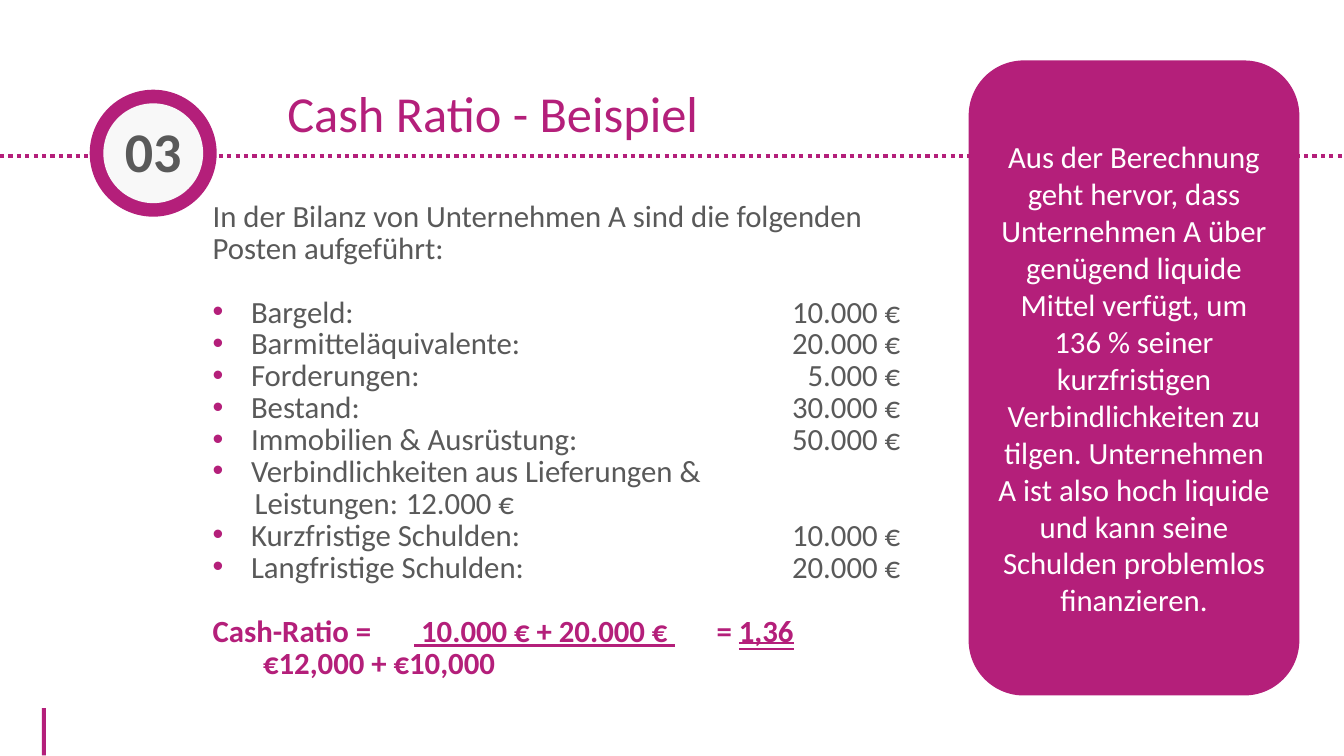
"""Build the slide with the worked cash ratio example."""
from dataclasses import dataclass, field

import lxml.etree
import pptx
import pptx.dml.color
import pptx.enum.dml
import pptx.enum.shapes
import pptx.enum.text
import pptx.oxml.ns
import pptx.shapes.autoshape
import pptx.slide
import pptx.text.text
import pptx.util

Pt = pptx.util.Pt
Align = pptx.enum.text.PP_ALIGN
Anchor = pptx.enum.text.MSO_ANCHOR
Underline = pptx.enum.text.MSO_UNDERLINE
Preset = pptx.enum.shapes.MSO_SHAPE

MAGENTA = pptx.dml.color.RGBColor(0xB4, 0x1F, 0x7A)
GREY = pptx.dml.color.RGBColor(0x59, 0x59, 0x59)
PALE = pptx.dml.color.RGBColor(0xF8, 0xF8, 0xF8)
WHITE = pptx.dml.color.RGBColor(0xFF, 0xFF, 0xFF)

FONT = "Calibri"
TEXT_SIZE = 22
LINE_PITCH = 22.8
HANGING = 27.4
AMOUNT_TABS = (("r", 514),)
RATIO_TABS = (("ctr", 290), ("l", 409))


@dataclass(frozen=True)
class Piece:
    text: str
    color: pptx.dml.color.RGBColor = GREY
    size: float = TEXT_SIZE
    bold: bool = False
    underline: Underline = Underline.NONE


@dataclass(frozen=True)
class Line:
    pieces: list[Piece]
    bullet: bool = False
    margin: float = 0
    tabs: tuple[tuple[str, float], ...] = ()
    gap: float = 0


@dataclass(frozen=True)
class Block:
    preset: Preset
    box: tuple[float, float, float, float]
    fill: pptx.dml.color.RGBColor
    pieces: list[Piece] = field(default_factory=list)
    inset: float = 7.2
    lift: float = 3.6


def posten(label: str, amount: str = "", gap: float = 0) -> Line:
    text = f"{label}\t{amount}" if amount else label
    return Line([Piece(text)], True, HANGING, AMOUNT_TABS, gap)


def ratio(text: str, underline: Underline = Underline.NONE) -> Piece:
    return Piece(text, MAGENTA, bold=True, underline=underline)


BODY = [
    Line([Piece("In der Bilanz von Unternehmen A sind die folgenden")]),
    Line([Piece("Posten aufgeführt:")]),
    posten("Bargeld:", "10.000 €", LINE_PITCH),
    posten("Barmitteläquivalente:", "20.000 €"),
    posten("Forderungen:", "5.000 €"),
    posten("Bestand:", "30.000 €"),
    posten("Immobilien & Ausrüstung:", "50.000 €"),
    posten("Verbindlichkeiten aus Lieferungen &"),
    Line([Piece("Leistungen:\t12.000 €")], margin=30, tabs=AMOUNT_TABS),
    posten("Kurzfristige Schulden:", "10.000 €"),
    posten("Langfristige Schulden:", "20.000 €"),
    Line(
        [
            ratio("Cash-Ratio =\t"),
            ratio(" 10.000 € + 20.000 € ", Underline.SINGLE_LINE),
            ratio("\t= "),
            ratio("1,36", Underline.DOUBLE_LINE),
        ],
        tabs=RATIO_TABS,
        gap=LINE_PITCH,
    ),
    Line([ratio("\t€12,000 + €10,000")], tabs=RATIO_TABS),
]

CONCLUSION = (
    "Aus der Berechnung geht hervor, dass Unternehmen A über genügend liquide "
    "Mittel verfügt, um 136 % seiner kurzfristigen Verbindlichkeiten zu tilgen. "
    "Unternehmen A ist also hoch liquide und kann seine Schulden problemlos "
    "finanzieren."
)

BLOCKS = [
    Block(Preset.RECTANGLE, (29.9, 505.8, 2.9, 33.8), MAGENTA),
    Block(Preset.OVAL, (64.1, 64.1, 90.7, 90.7), MAGENTA),
    Block(Preset.OVAL, (73.8, 73.8, 71.3, 71.3), PALE,
          [Piece("03", size=40, bold=True)], inset=0, lift=5),
    Block(Preset.ROUNDED_RECTANGLE, (691.9, 43.2, 236.2, 453.6), MAGENTA,
          [Piece(CONCLUSION, WHITE)]),
]


def add_pieces(paragraph: pptx.text.text._Paragraph, pieces: list[Piece]) -> None:
    for piece in pieces:
        run = paragraph.add_run()
        run.text = piece.text
        run.font.name = FONT
        run.font.size = Pt(piece.size)
        run.font.bold = piece.bold
        run.font.underline = piece.underline
        run.font.color.rgb = piece.color


def add_child(parent: lxml.etree._Element, tag: str, **attributes: str) -> lxml.etree._Element:
    return lxml.etree.SubElement(parent, pptx.oxml.ns.qn(tag), attributes)


def format_line(paragraph: pptx.text.text._Paragraph, line: Line) -> None:
    properties = paragraph._p.get_or_add_pPr()
    properties.set("marL", str(Pt(line.margin)))
    properties.set("indent", str(Pt(-line.margin if line.bullet else 0)))
    if line.bullet:
        add_child(add_child(properties, "a:buClr"), "a:srgbClr", val=str(MAGENTA))
        add_child(properties, "a:buFont", typeface="Arial")
        add_child(properties, "a:buChar", char="•")
    else:
        add_child(properties, "a:buNone")
    if line.tabs:
        stops = add_child(properties, "a:tabLst")
        for align, position in line.tabs:
            add_child(stops, "a:tab", pos=str(Pt(position)), algn=align)
    paragraph.alignment = Align.LEFT
    paragraph.line_spacing = Pt(LINE_PITCH)
    paragraph.space_before = Pt(line.gap)
    paragraph.space_after = Pt(0)
    add_pieces(paragraph, line.pieces)


def place(shape: pptx.shapes.autoshape.Shape, box: tuple[float, float, float, float]) -> None:
    shape.left, shape.top, shape.width, shape.height = map(Pt, box)
    frame = shape.text_frame
    frame.word_wrap = True
    frame.auto_size = pptx.enum.text.MSO_AUTO_SIZE.NONE
    frame.vertical_anchor = Anchor.TOP


def draw_block(slide: pptx.slide.Slide, block: Block) -> None:
    shape = slide.shapes.add_shape(block.preset, *map(Pt, block.box))
    shape.shadow.inherit = False
    shape.fill.solid()
    shape.fill.fore_color.rgb = block.fill
    shape.line.fill.background()
    if block.pieces:
        frame = shape.text_frame
        frame.word_wrap = True
        frame.vertical_anchor = Anchor.MIDDLE
        frame.margin_left = frame.margin_right = Pt(block.inset)
        frame.margin_bottom = Pt(block.lift)
        frame.margin_top = Pt(min(block.inset, 3.6))
        frame.paragraphs[0].alignment = Align.CENTER
        add_pieces(frame.paragraphs[0], block.pieces)


def draw_dotted_rule(slide: pptx.slide.Slide, y: float, width: float) -> None:
    rule = slide.shapes.add_connector(
        pptx.enum.shapes.MSO_CONNECTOR.STRAIGHT, Pt(0), Pt(y), Pt(width), Pt(y))
    rule.line.color.rgb = MAGENTA
    rule.line.width = Pt(3)
    rule.line.dash_style = pptx.enum.dml.MSO_LINE.ROUND_DOT
    add_child(rule._element.spPr, "a:effectLst")


def main() -> None:
    deck = pptx.Presentation()
    deck.slide_width, deck.slide_height = Pt(960), Pt(540)
    slide = deck.slides.add_slide(deck.slide_layouts[1])

    heading = slide.shapes.title
    place(heading, (198, 63.4, 482, 46))
    heading_line = heading.text_frame.paragraphs[0]
    heading_line.alignment = Align.LEFT
    heading_line.line_spacing = 0.8
    add_pieces(heading_line, [Piece("Cash Ratio - Beispiel", MAGENTA, 36)])

    balance = slide.placeholders[1]
    place(balance, (144.7, 140.4, 533, 374))
    for index, line in enumerate(BODY):
        frame = balance.text_frame
        format_line(frame.add_paragraph() if index else frame.paragraphs[0], line)

    draw_dotted_rule(slide, 111.6, 960)
    for block in BLOCKS:
        draw_block(slide, block)
    deck.save("out.pptx")


if __name__ == "__main__":
    main()
